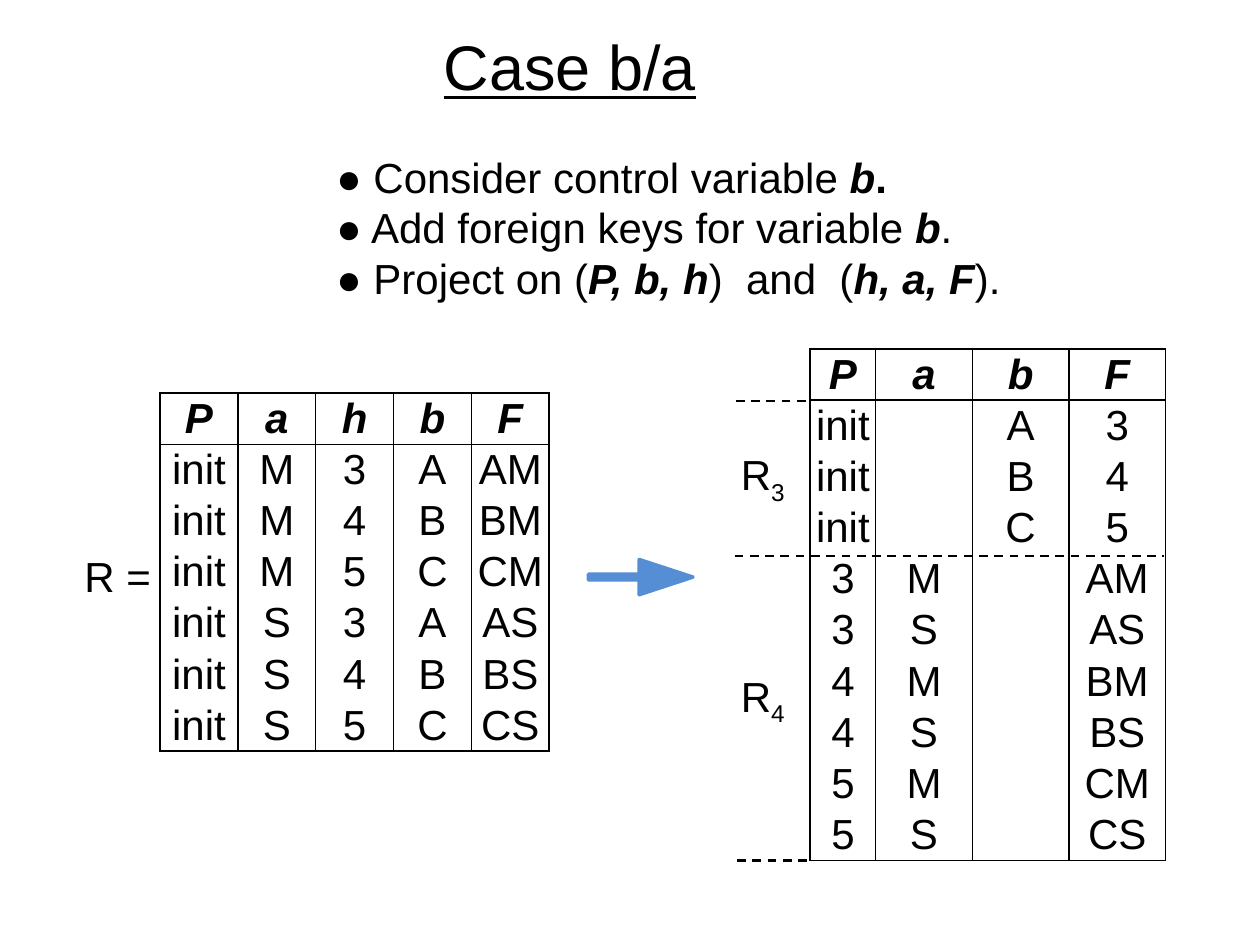
from lxml import etree
from pptx import Presentation
from pptx.dml.color import RGBColor
from pptx.enum.dml import MSO_LINE
from pptx.enum.shapes import MSO_CONNECTOR, MSO_SHAPE
from pptx.enum.text import MSO_ANCHOR, MSO_AUTO_SIZE, PP_ALIGN
from pptx.oxml.ns import qn
from pptx.util import Inches, Pt

COLORS = {name: RGBColor.from_string(value)
          for name, value in {"ink": "000000", "arrow": "558ED5"}.items()}
FONT = "Arial"
TITLE_ONLY = 5
DASH = MSO_LINE.DASH
STRAIGHT = MSO_CONNECTOR.STRAIGHT
RIGHT_ARROW = MSO_SHAPE.RIGHT_ARROW
TOP, MIDDLE = MSO_ANCHOR.TOP, MSO_ANCHOR.MIDDLE
LEFT, CENTER = PP_ALIGN.LEFT, PP_ALIGN.CENTER
FIT_SHAPE = MSO_AUTO_SIZE.SHAPE_TO_FIT_TEXT
ROW_HEIGHT = 0.406
NO_GRID_STYLE = "{2D5ABB26-0587-4C30-8999-92F81FD0307C}"


def style_paragraph(paragraph, size=24, align=LEFT):
    paragraph.alignment = align
    paragraph.font.name = FONT
    paragraph.font.size = Pt(size)
    paragraph.font.color.rgb = COLORS["ink"]


def add_text(left, top, width, height, lines):
    """Add a text box; each line is a list of (text, style letters b, i, s)."""
    box = slide.shapes.add_textbox(Inches(left), Inches(top), Inches(width), Inches(height))
    frame = box.text_frame
    frame.auto_size = FIT_SHAPE
    frame.margin_left = frame.margin_right = frame.margin_top = frame.margin_bottom = 0
    frame.word_wrap = True
    for index, line in enumerate(lines):
        paragraph = frame.add_paragraph() if index else frame.paragraphs[0]
        style_paragraph(paragraph)
        for text, styles in line:
            run = paragraph.add_run()
            run.text = text
            if "b" in styles:
                run.font.bold = True
            if "i" in styles:
                run.font.italic = True
            if "s" in styles:
                run.font._element.set("baseline", "-25000")


prs = Presentation()
prs.slide_width, prs.slide_height = Inches(10), Inches(7.5)
slide = prs.slides.add_slide(prs.slide_layouts[TITLE_ONLY])

# Title
title = slide.shapes.title
title.left, title.top = Inches(3.42), Inches(0.17)
title.width, title.height = Inches(2.67), Inches(0.71)
title.text_frame.text = "Case b/a"
title.text_frame.vertical_anchor = TOP
title.text_frame.auto_size = FIT_SHAPE
style_paragraph(title.text_frame.paragraphs[0], 36)
title.text_frame.paragraphs[0].font.underline = True

# Steps
add_text(2.67, 1.2, 5.58, 1.21, [
    [("● Consider control variable ", ""), ("b", "bi"), (".", "b")],
    [("● Add foreign keys for variable ", ""), ("b", "bi"), (".", "")],
    [("● Project on (", ""), ("P, b, h", "bi"), (")  and  (", ""),
     ("h, a, F", "bi"), (").", "")],
])

# Relation before and after the projection
pairs = [(variable, number, key) for variable in "MS" for number, key in zip("345", "ABC")]
source_rows = [list("PahbF")] + [
    ["init", variable, number, key, key + variable] for variable, number, key in pairs]
split_rows = [list("PabF")]
split_rows += [["init", "", key, number] for number, key in zip("345", "ABC")]
split_rows += [[number, variable, "", key + variable]
               for number, key in zip("345", "ABC") for variable in "MS"]

relations = [
    (1.27, 3.12, [0.618] * 5, source_rows),
    (6.43, 2.77, [0.52] + [0.767] * 3, split_rows),
]
for left, top, widths, rows in relations:
    table = slide.shapes.add_table(
        len(rows), len(widths), Inches(left), Inches(top),
        Inches(sum(widths)), Inches(ROW_HEIGHT * len(rows))).table
    table.first_row = table.horz_banding = False
    table._tbl.tblPr.find(qn("a:tableStyleId")).text = NO_GRID_STYLE
    for column, width in zip(table.columns, widths):
        column.width = Inches(width)
    for r, values in enumerate(rows):
        table.rows[r].height = Inches(ROW_HEIGHT)
        sides = "LR" + ("TB" if r == 0 else "B" if r == len(rows) - 1 else "")
        for c, value in enumerate(values):
            cell = table.cell(r, c)
            cell.text = value
            cell.vertical_anchor = MIDDLE
            cell.margin_left = cell.margin_right = cell.margin_top = cell.margin_bottom = 0
            paragraph = cell.text_frame.paragraphs[0]
            style_paragraph(paragraph, align=CENTER)
            paragraph.font.bold = paragraph.font.italic = r == 0
            properties = cell._tc.get_or_add_tcPr()
            for side in sides:
                border = etree.SubElement(properties, qn("a:ln" + side), w=str(Pt(1)))
                fill = etree.SubElement(border, qn("a:solidFill"))
                etree.SubElement(fill, qn("a:srgbClr"), val=str(COLORS["ink"]))
            cell.fill.background()

# Labels
add_text(0.67, 4.37, 0.53, 0.4, [[("R =", "")]])
for number, top in (("3", 3.56), ("4", 5.32)):
    add_text(5.88, top, 0.42, 0.4, [[("R", ""), (number, "s")]])

# Arrow between the relations
arrow = slide.shapes.add_shape(
    RIGHT_ARROW, Inches(4.67), Inches(4.44), Inches(0.83), Inches(0.28))
arrow.adjustments[0], arrow.adjustments[1] = 0.16, 1.524
arrow.shadow.inherit = False
arrow.fill.solid()
arrow.fill.fore_color.rgb = COLORS["arrow"]
arrow.line.color.rgb = COLORS["arrow"]
arrow.line.width = Pt(2)

# Dashed limits of R3 and R4
for start, end, y in ((5.84, 6.42, 3.18), (5.83, 9.24, 4.41), (5.85, 6.43, 6.83)):
    limit = slide.shapes.add_connector(
        STRAIGHT, Inches(start), Inches(y), Inches(end), Inches(y))
    limit.line.color.rgb = COLORS["ink"]
    limit.line.width = Pt(1.25)
    limit.line.dash_style = DASH
    etree.SubElement(limit._element.spPr, qn("a:effectLst"))

prs.save("out.pptx")
